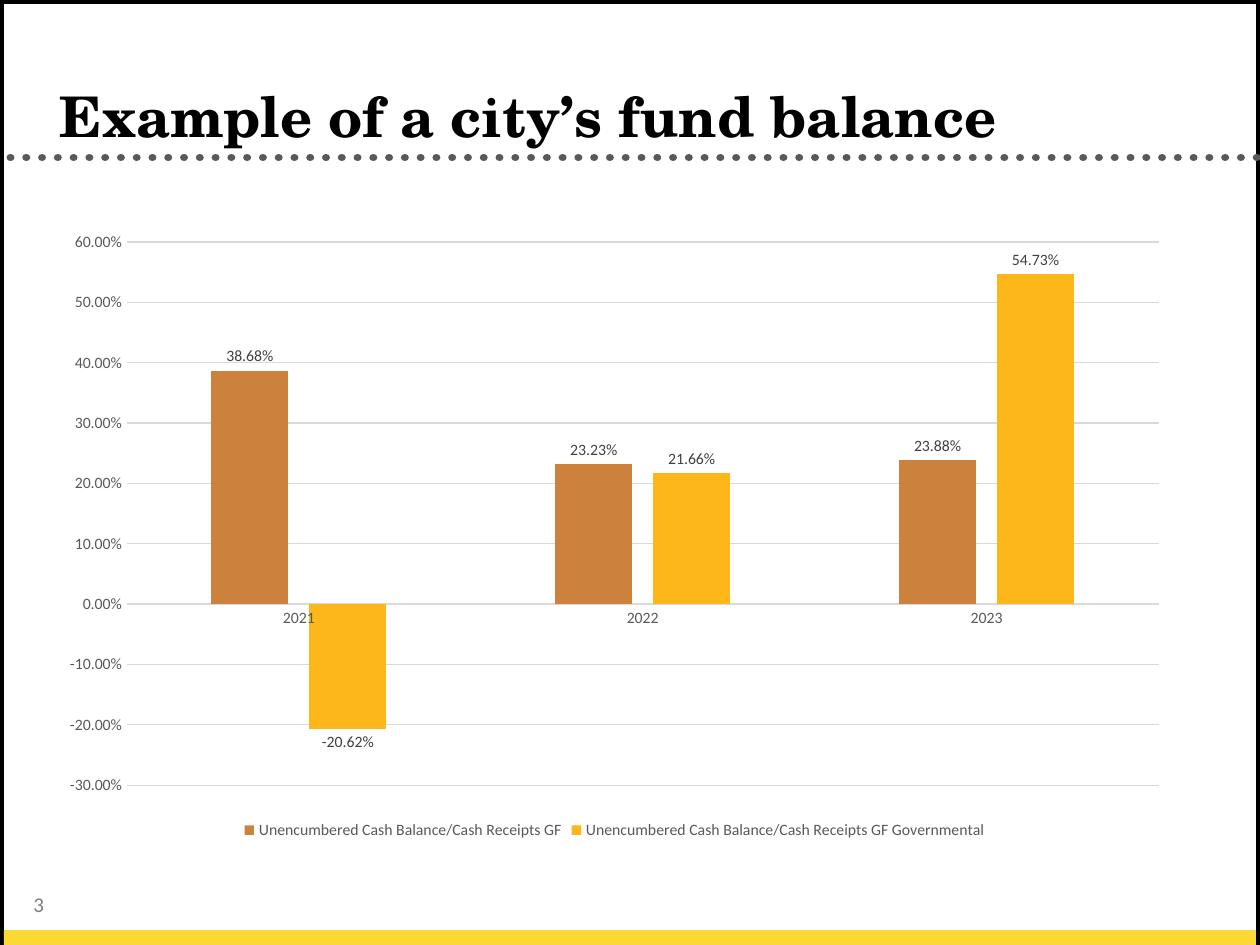
from lxml import etree
from pptx import Presentation
from pptx.chart.data import CategoryChartData
from pptx.dml.color import RGBColor
from pptx.enum.chart import XL_CHART_TYPE, XL_LABEL_POSITION, XL_LEGEND_POSITION, XL_TICK_MARK
from pptx.enum.dml import MSO_LINE
from pptx.enum.shapes import MSO_CONNECTOR, MSO_SHAPE
from pptx.enum.text import MSO_ANCHOR
from pptx.oxml.ns import qn
from pptx.util import Pt

BLACK = RGBColor(0x00, 0x00, 0x00)
WHITE = RGBColor(0xFF, 0xFF, 0xFF)
YELLOW = RGBColor(0xFB, 0xD8, 0x33)
AMBER = RGBColor(0xFE, 0xB7, 0x1A)
BRONZE = RGBColor(0xCC, 0x82, 0x3D)
DARK_GRAY = RGBColor(0x40, 0x40, 0x40)
GRAY = RGBColor(0x59, 0x59, 0x59)
MID_GRAY = RGBColor(0x80, 0x80, 0x80)
LIGHT_GRAY = RGBColor(0xD9, 0xD9, 0xD9)

RECTANGLE = MSO_SHAPE.RECTANGLE
STRAIGHT = MSO_CONNECTOR.STRAIGHT
DOTTED = MSO_LINE.ROUND_DOT
TOP = MSO_ANCHOR.TOP
BOTTOM = MSO_ANCHOR.BOTTOM
CLUSTERED = XL_CHART_TYPE.COLUMN_CLUSTERED
OUTSIDE_END = XL_LABEL_POSITION.OUTSIDE_END
LEGEND_BOTTOM = XL_LEGEND_POSITION.BOTTOM
NO_TICK = XL_TICK_MARK.NONE

SERIES = [
    ("Unencumbered Cash Balance/Cash Receipts GF", BRONZE, (0.3868, 0.2323, 0.2388)),
    ("Unencumbered Cash Balance/Cash Receipts GF Governmental", AMBER, (-0.2062, 0.2166, 0.5473)),
]


class SlideBuilder:
    """Draws styled elements on the current slide, with lengths in points."""

    heading_font = "TeX Gyre Schola"
    body_font = "Calibri"
    percent = "0.00%"

    def __init__(self, slide):
        self.slide = slide

    def apply(self, target, values):
        for name, value in values.items():
            setattr(target, name, value)

    def style_font(self, font, size, color, name=body_font, bold=False):
        self.apply(font, {"name": name, "size": Pt(size), "bold": bold})
        font.color.rgb = color

    def style_line(self, line, color, width):
        line.color.rgb = color
        line.width = Pt(width)

    def rectangle(self, left, top, width, height, fill, border=None, border_width=0):
        shape = self.slide.shapes.add_shape(RECTANGLE, Pt(left), Pt(top), Pt(width), Pt(height))
        shape.shadow.inherit = False
        shape.fill.solid()
        shape.fill.fore_color.rgb = fill
        if border is None:
            shape.line.fill.background()
        else:
            self.style_line(shape.line, border, border_width)

    def dotted_rule(self, left, right, y, color, width):
        connector = self.slide.shapes.add_connector(STRAIGHT, Pt(left), Pt(y), Pt(right), Pt(y))
        self.style_line(connector.line, color, width)
        connector.line.dash_style = DOTTED
        properties = connector.element.spPr
        properties.find(qn("a:ln")).set("cap", "rnd")
        etree.SubElement(properties, qn("a:effectLst"))

    def text(self, left, top, width, height, wording, anchor, **font_style):
        shape = self.slide.shapes.add_textbox(Pt(left), Pt(top), Pt(width), Pt(height))
        self.apply(shape.text_frame, {"word_wrap": True, "vertical_anchor": anchor})
        paragraph = shape.text_frame.paragraphs[0]
        paragraph.text = wording
        self.style_font(paragraph.runs[0].font, **font_style)

    def column_chart(self, left, top, width, height, categories, series_rows):
        data = CategoryChartData(number_format=self.percent)
        data.categories = categories
        for name, _, values in series_rows:
            data.add_series(name, values)
        chart = self.slide.shapes.add_chart(
            CLUSTERED, Pt(left), Pt(top), Pt(width), Pt(height), data).chart
        self.apply(chart, {"has_title": False, "has_legend": True})
        self.style_font(chart.font, 10, BLACK)
        self.apply(chart.legend, {"position": LEGEND_BOTTOM, "include_in_layout": False})
        self.style_font(chart.legend.font, 9, GRAY)
        for axis in (chart.category_axis, chart.value_axis):
            self.apply(axis, {"major_tick_mark": NO_TICK, "minor_tick_mark": NO_TICK})
            self.style_font(axis.tick_labels.font, 9, GRAY)
        self.style_line(chart.category_axis.format.line, LIGHT_GRAY, 0.75)
        value_axis = chart.value_axis
        self.apply(value_axis, {"minimum_scale": -0.3, "maximum_scale": 0.6, "major_unit": 0.1})
        value_axis.format.line.fill.background()
        self.style_line(value_axis.major_gridlines.format.line, LIGHT_GRAY, 0.75)
        number_style = {"number_format": self.percent, "number_format_is_linked": False}
        self.apply(value_axis.tick_labels, number_style)
        plot = chart.plots[0]
        self.apply(plot, {"gap_width": 219, "overlap": -27, "vary_by_categories": False})
        for series, (_, color, _) in zip(plot.series, series_rows):
            series.invert_if_negative = False
            series.format.fill.solid()
            series.format.fill.fore_color.rgb = color
            labels = series.data_labels
            self.apply(labels, {"show_value": True, "position": OUTSIDE_END, **number_style})
            self.style_font(labels.font, 9, DARK_GRAY)


def main():
    presentation = Presentation()
    presentation.slide_width = Pt(720)
    presentation.slide_height = Pt(540)
    builder = SlideBuilder(presentation.slides.add_slide(presentation.slide_layouts[6]))
    builder.rectangle(0, 0, 720, 540, WHITE, BLACK, 4.5)
    builder.text(12, 506, 66, 40, "3", TOP, size=12, color=MID_GRAY)
    builder.dotted_rule(6, 720, 90, GRAY, 4.5)
    builder.rectangle(2.25, 531.5, 715.5, 8.5, YELLOW)
    builder.text(27, 21.5, 670, 67, "Example of a city’s fund balance", BOTTOM,
                 size=32, color=BLACK, name=builder.heading_font, bold=True)
    builder.column_chart(27, 126, 648, 356.5, ("2021", "2022", "2023"), SERIES)
    presentation.save("out.pptx")


if __name__ == "__main__":
    main()
